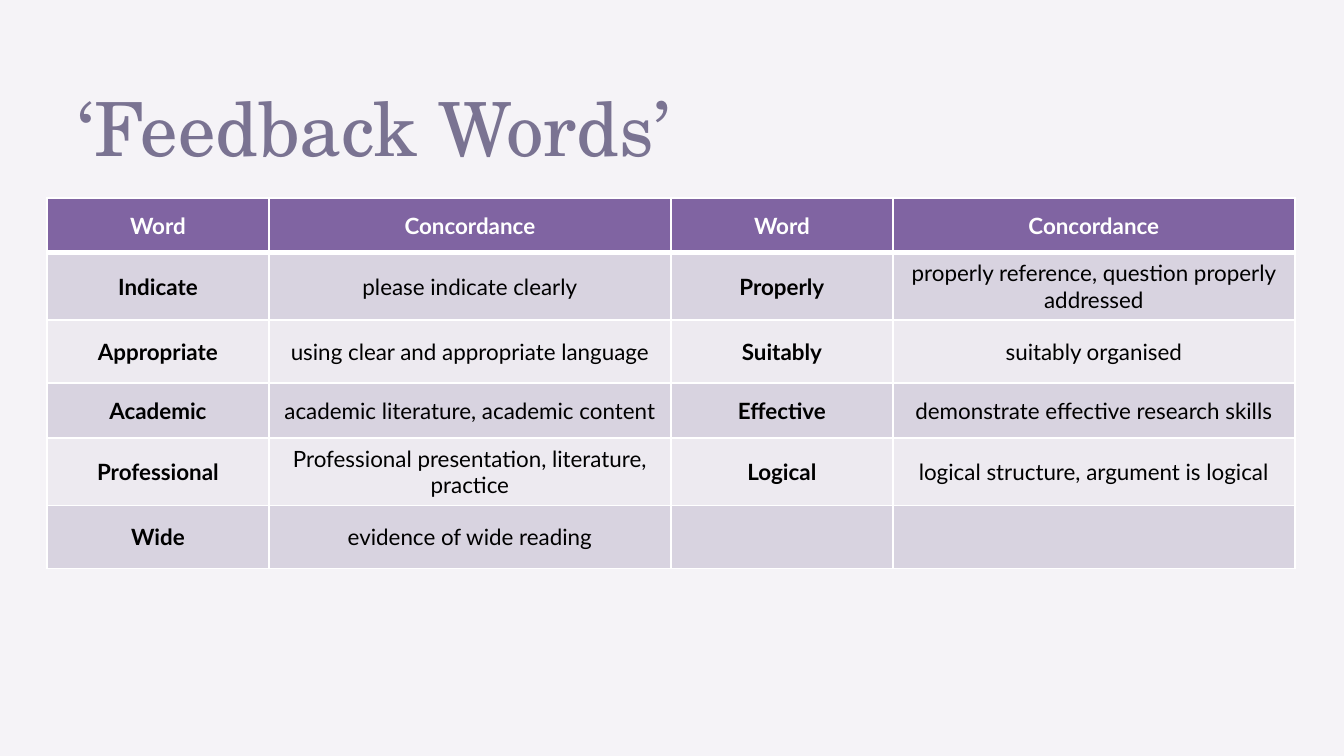
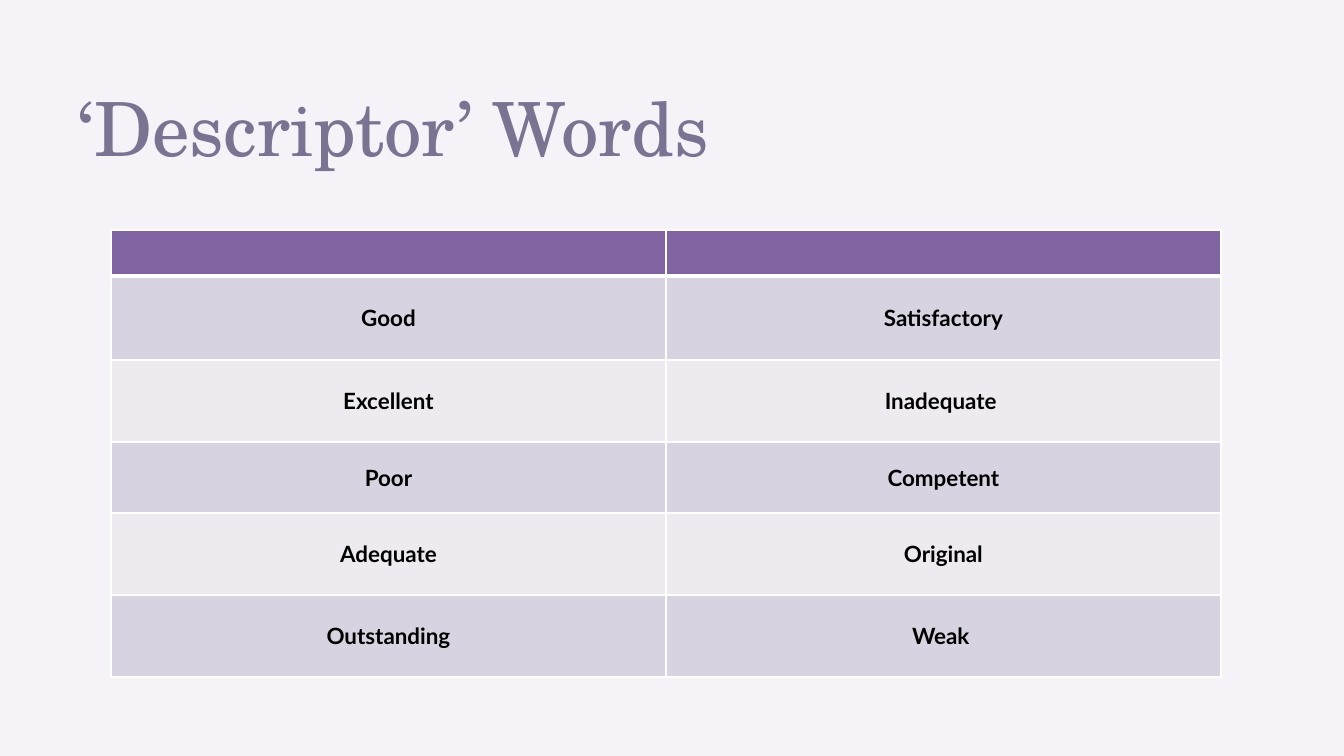
from dataclasses import dataclass
from lxml.etree import SubElement
from pptx import Presentation
from pptx.dml.color import RGBColor
from pptx.enum.text import MSO_ANCHOR, PP_ALIGN
from pptx.oxml.ns import qn
from pptx.util import Emu, Pt

PAGES = [
    {
        "title": "‘Feedback Words’",
        "at": (47, 198),
        "cols": [222, 402, 222, 402],
        "rows": [55, 62, 63, 55, 63, 63],
        "bold": (0, 2),
        "cells": [
            ("Word", "Concordance", "Word", "Concordance"),
            ("Indicate", "please indicate clearly",
             "Properly", "properly reference, question properly addressed"),
            ("Appropriate", "using clear and appropriate language",
             "Suitably", "suitably organised"),
            ("Academic", "academic literature, academic content",
             "Effective", "demonstrate effective research skills"),
            ("Professional", "Professional presentation, literature, practice",
             "Logical", "logical structure, argument is logical"),
            ("Wide", "evidence of wide reading", "", ""),
        ],
    },
    {
        "title": "‘Descriptor’ Words",
        "at": (111, 230),
        "cols": [555, 555],
        "rows": [46, 84, 82, 71, 82, 82],
        "bold": (0, 1),
        "cells": [
            ("", ""),
            ("Good", "Satisfactory"),
            ("Excellent", "Inadequate "),
            ("Poor", "Competent"),
            ("Adequate", "Original"),
            ("Outstanding", "Weak "),
        ],
    },
]


@dataclass(frozen=True)
class Theme:
    back: str = "F5F3F7"
    title: str = "7A7392"
    head: str = "8064A2"
    bands: tuple = ("EDEAF0", "D8D3E0")
    line: str = "FFFFFF"
    light: str = "FFFFFF"
    dark: str = "000000"
    serif: str = "TeX Gyre Schola"
    sans: str = "Lato"
    big: int = 40
    lead: int = 42
    small: int = 12
    thin: int = 1
    thick: int = 3


LOOK = Theme()
WIDE, HIGH = 1344, 756
TITLE = (79, 93, 1034, 71)


def px(num):
    return Emu(round(num * 914400 / 134.4))


def tint(text):
    return RGBColor.from_string(text)


def apply(item, form):
    for key, val in form.items():
        setattr(item, key, val)


def style(font, name, size, tone, bold=False):
    apply(font, {"name": name, "size": Pt(size), "bold": bold})
    font.color.rgb = tint(tone)


def paint(fill, tone):
    fill.solid()
    fill.fore_color.rgb = tint(tone)


def add_title(slide, text):
    frame = slide.shapes.add_textbox(*map(px, TITLE)).text_frame
    sides = ("left", "top", "right", "bottom")
    apply(frame, {f"margin_{side}": 0 for side in sides})
    frame.word_wrap = True
    para = frame.paragraphs[0]
    para.line_spacing = Pt(LOOK.lead)
    run = para.add_run()
    run.text = text
    style(run.font, LOOK.serif, LOOK.big, LOOK.title)


def edge(cell, row):
    props = cell._tc.get_or_add_tcPr()
    heavy = {0: "B", 1: "T"}.get(row)
    for side in "LRTB":
        width = LOOK.thick if side == heavy else LOOK.thin
        line = SubElement(props, qn(f"a:ln{side}"), w=str(Pt(width)))
        fill = SubElement(line, qn("a:solidFill"))
        SubElement(fill, qn("a:srgbClr"), val=LOOK.line)


def fill_cell(cell, text, row, bold):
    edge(cell, row)
    paint(cell.fill, LOOK.bands[row % 2] if row else LOOK.head)
    cell.vertical_anchor = MSO_ANCHOR.MIDDLE
    para = cell.text_frame.paragraphs[0]
    para.alignment = PP_ALIGN.CENTER
    if text:
        run = para.add_run()
        run.text = text
        tone = LOOK.dark if row else LOOK.light
        style(run.font, LOOK.sans, LOOK.small, tone, bold)
    else:
        SubElement(para._p, qn("a:endParaRPr"), sz=str(LOOK.small * 100))


def add_grid(slide, page):
    cols, rows = page["cols"], page["rows"]
    box = (*page["at"], sum(cols), sum(rows))
    grid = slide.shapes.add_table(len(rows), len(cols), *map(px, box)).table
    grid.horz_banding = False
    for col, width in zip(grid.columns, cols):
        col.width = px(width)
    for row, height in zip(grid.rows, rows):
        row.height = px(height)
    for r, line in enumerate(page["cells"]):
        for c, text in enumerate(line):
            fill_cell(grid.cell(r, c), text, r, r == 0 or c in page["bold"])


def main():
    deck = Presentation()
    apply(deck, {"slide_width": px(WIDE), "slide_height": px(HIGH)})
    for page in PAGES:
        slide = deck.slides.add_slide(deck.slide_layouts[6])
        paint(slide.background.fill, LOOK.back)
        add_title(slide, page["title"])
        add_grid(slide, page)
    deck.save("out.pptx")


if __name__ == "__main__":
    main()
